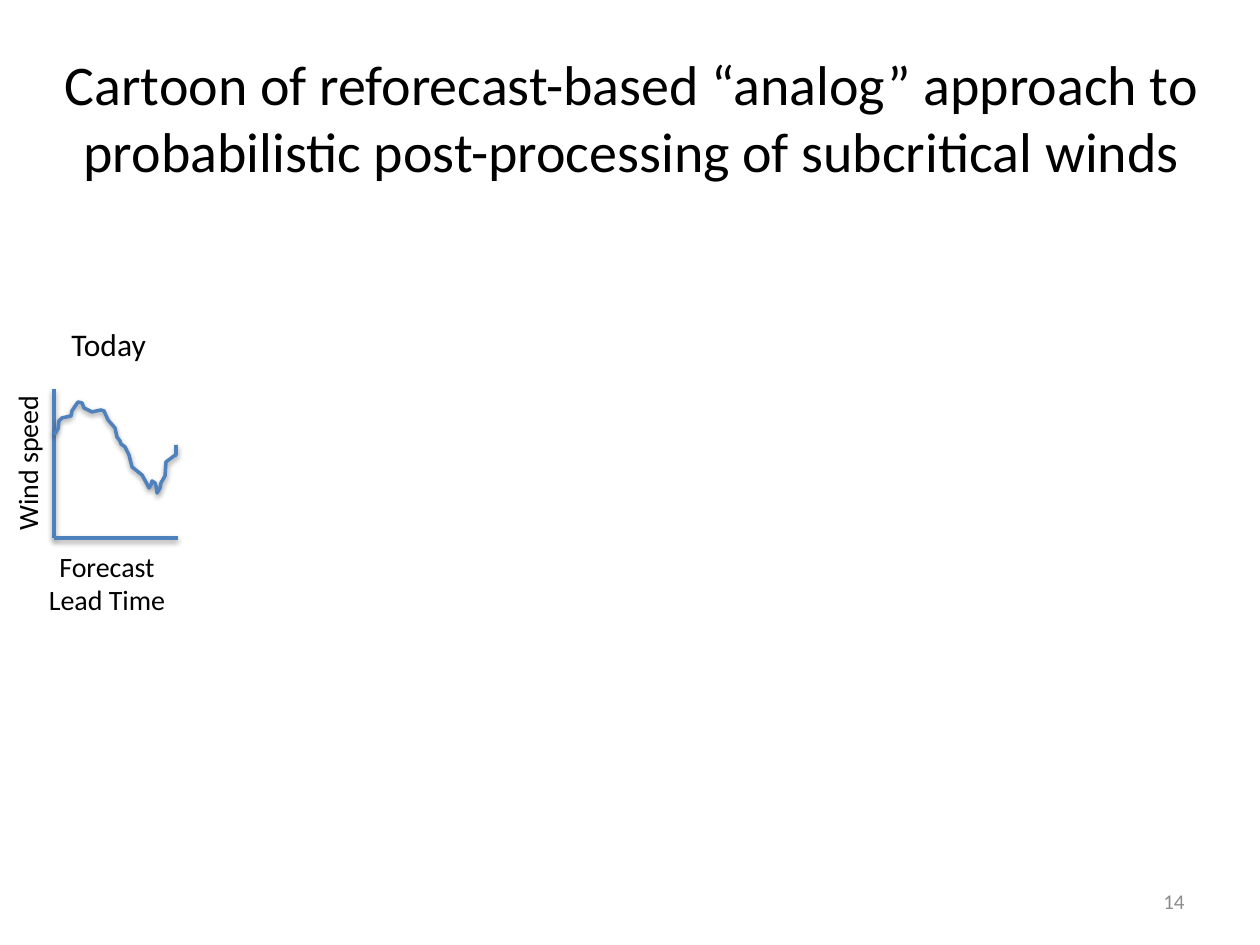
import pptx
import pptx.util
import pptx.dml.color
import pptx.enum.shapes
import pptx.enum.text
import pptx.oxml
import pptx.oxml.ns

PX = 914400 // 126
FONT = "Calibri"
BLACK = pptx.dml.color.RGBColor(0x00, 0x00, 0x00)
GRAY = pptx.dml.color.RGBColor(0x8C, 0x8C, 0x8C)
BLUE = pptx.dml.color.RGBColor(0x4F, 0x81, 0xBD)
ALIGN = pptx.enum.text.PP_ALIGN
ANCHOR = pptx.enum.text.MSO_ANCHOR

SHADOW = (
    f'<a:effectLst {pptx.oxml.ns.nsdecls("a")}>'
    '<a:outerShdw blurRad="40000" dist="20000" dir="5400000" rotWithShape="0">'
    '<a:srgbClr val="000000"><a:alpha val="38000"/></a:srgbClr>'
    '</a:outerShdw></a:effectLst>'
)

WIND_CURVE = [
    (0, 46), (4, 40), (5, 32), (8, 29), (17, 27), (18, 22), (24, 13),
    (28, 14), (30, 19), (34, 21), (38, 23), (47, 21), (50, 22), (54, 31),
    (61, 39), (63, 48), (66, 52), (67, 55), (71, 58), (75, 66), (78, 78),
    (83, 82), (88, 86), (93, 95), (95, 99), (97, 96), (98, 92), (101, 94),
    (102, 97), (103, 104), (106, 99), (107, 94), (111, 87), (112, 73),
    (120, 67), (122, 66), (122, 56),
]


def px(*lengths):
    return [n * PX for n in lengths]


def format_text(tf, lines, size, color, align, anchor, wrap):
    tf.word_wrap = wrap
    tf.vertical_anchor = anchor
    tf.text = "\n".join(lines)
    for p in tf.paragraphs:
        p.alignment = align
        p.font.name = FONT
        p.font.size = pptx.util.Pt(size)
        p.font.color.rgb = color


def add_label(s, box, lines, size, color=BLACK, align=ALIGN.LEFT,
              anchor=ANCHOR.TOP, wrap=False):
    sp = s.shapes.add_textbox(*px(*box))
    format_text(sp.text_frame, lines, size, color, align, anchor, wrap)
    return sp


def style_line(sp):
    sp.line.color.rgb = BLUE
    sp.line.width = pptx.util.Pt(2)
    sp._element.spPr.append(pptx.oxml.parse_xml(SHADOW))


def add_title(s, box):
    sp = s.shapes.title
    sp.left, sp.top, sp.width, sp.height = px(*box)
    text = ("Cartoon of reforecast-based “analog” approach to "
            "probabilistic post-processing of subcritical winds")
    format_text(sp.text_frame, [text], 32, BLACK, ALIGN.CENTER,
                ANCHOR.MIDDLE, True)


def add_axis(s, x1, y1, x2, y2):
    line = s.shapes.add_connector(
        pptx.enum.shapes.MSO_CONNECTOR.STRAIGHT, *px(x1, y1, x2, y2))
    style_line(line)


def add_forecast_plot(s, box):
    x, y, w, h = box
    add_axis(s, x, y, x, y + h)
    add_axis(s, x + w, y + h, x, y + h)

    points = [(x + dx, y + dy) for dx, dy in WIND_CURVE]
    builder = s.shapes.build_freeform(*points[0], scale=PX)
    builder.add_line_segments(points[1:], close=False)
    curve = builder.convert_to_shape()
    curve.fill.background()
    style_line(curve)

    add_label(s, (x + 5, y - 70, 105, 50), ["Today"], 18)
    add_label(s, (x - 19, y + h + 5, 144, 81), ["Forecast", "Lead Time"], 16,
              align=ALIGN.CENTER)
    speed = add_label(s, (x - 116, y + 41, 179, 47), ["Wind speed"], 16,
                      wrap=True)
    speed.rotation = 270


def add_slide_number(s, box):
    add_label(s, box, ["14"], 12, GRAY, ALIGN.RIGHT, ANCHOR.MIDDLE, True)


def main():
    prs = pptx.Presentation()
    prs.slide_width, prs.slide_height = px(1260, 945)
    s = prs.slides.add_slide(prs.slide_layouts[5])
    add_title(s, (4, 38, 1256, 157))
    add_forecast_plot(s, (54, 389, 124, 149))
    add_slide_number(s, (903, 876, 294, 50))
    prs.save("out.pptx")


if __name__ == "__main__":
    main()
